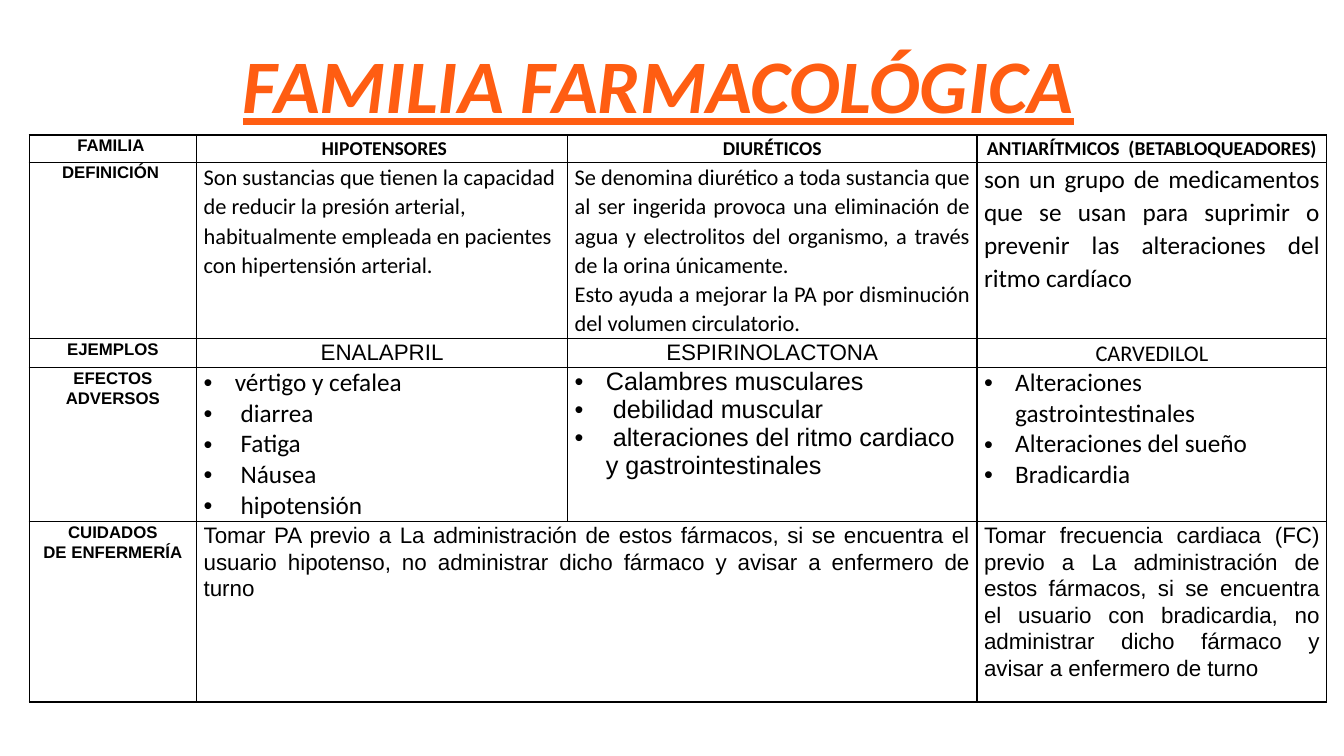
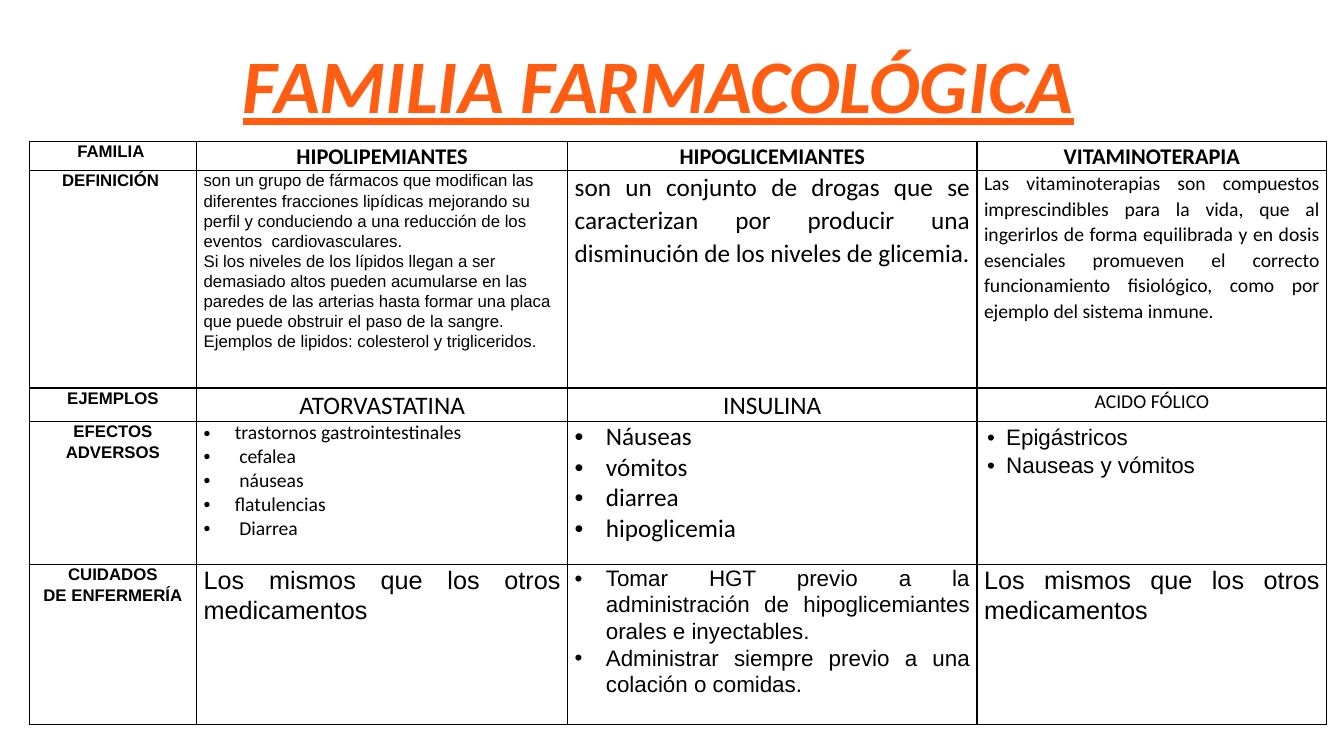
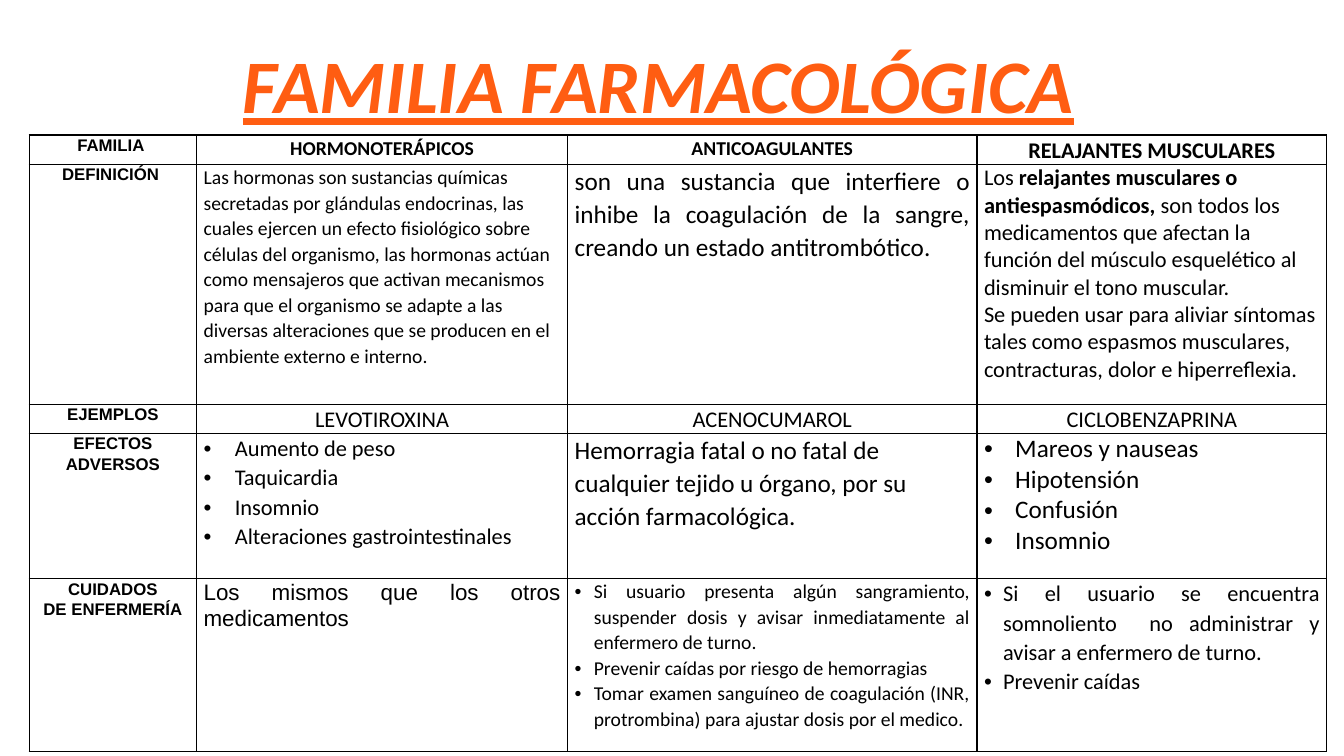
from dataclasses import dataclass

from lxml.etree import SubElement
from pptx import Presentation
from pptx.dml.color import RGBColor
from pptx.enum.text import MSO_ANCHOR, MSO_AUTO_SIZE, PP_ALIGN
from pptx.oxml.ns import qn
from pptx.util import Inches, Pt

COLORS = {"title": "FF5D12", "text": "000000", "border": "000000"}
TITLE = "FAMILIA FARMACOLÓGICA"
SANS, BODY = "Arial", "Calibri"
LEFT, CENTER, JUSTIFY = PP_ALIGN.LEFT, PP_ALIGN.CENTER, PP_ALIGN.JUSTIFY
TABLE_LEFT = 0.29
COLUMN_WIDTHS = (1.66, 3.68, 4.06, 3.47)
WIDE_INDENT, NARROW_INDENT = 0.31, 0.19
BOLD_MARK = "**"


@dataclass(frozen=True)
class Entry:
    """Text of one cell; an indent above zero makes its lines bullets."""
    lines: tuple[str, ...]
    size: int = 16
    font: str = BODY
    align: PP_ALIGN = LEFT
    bold: bool = False
    spacing: float = 1.07
    indent: float = 0
    margin: float = 0.07
    columns: int = 1


@dataclass(frozen=True)
class FamilySlide:
    """Entries of a table, row by row, without the label column."""
    top: float
    row_heights: tuple[float, ...]
    rows: tuple[tuple[Entry, ...], ...]


def label(*lines: str) -> Entry:
    return Entry(lines, 12, SANS, CENTER, bold=True)


def family(name: str, size: int = 14) -> Entry:
    return Entry((name,), size, align=CENTER, bold=True)


def example(name: str, size: int = 16, font: str = BODY) -> Entry:
    return Entry((name,), size, font, CENTER)


def prose(*lines: str, size: int = 16, font: str = BODY,
          align: PP_ALIGN = JUSTIFY, spacing: float = 1.07, columns: int = 1) -> Entry:
    return Entry(lines, size, font, align, spacing=spacing, columns=columns)


def bullets(*lines: str, size: int = 18, font: str = BODY, align: PP_ALIGN = LEFT,
            spacing: float = 1.0, indent: float = WIDE_INDENT, margin: float = 0.07) -> Entry:
    return Entry(lines, size, font, align, spacing=spacing, indent=indent, margin=margin)


def same_care(size: int) -> Entry:
    return prose("Los mismos que los otros medicamentos", size=size, font=SANS)


ROW_LABELS = (
    label("FAMILIA "),
    label("DEFINICIÓN "),
    label("EJEMPLOS"),
    label("EFECTOS ADVERSOS"),
    label("CUIDADOS", "DE ENFERMERÍA"),
)

SLIDES = (
    FamilySlide(1.34, (0.27, 1.75, 0.28, 1.53, 1.79), (
        (family(" HIPOTENSORES"), family("DIURÉTICOS"),
         family("ANTIARÍTMICOS  (BETABLOQUEADORES)")),
        (prose("Son sustancias que tienen la capacidad de reducir la presión arterial, "
               "habitualmente empleada en pacientes con hipertensión arterial.", align=LEFT),
         prose("Se denomina diurético a toda sustancia que al ser ingerida provoca una "
               "eliminación de agua y electrolitos del organismo, a través de la orina "
               "únicamente.",
               "Esto ayuda a mejorar la PA por disminución del volumen circulatorio."),
         prose("son un grupo de medicamentos que se usan para suprimir o prevenir las "
               "alteraciones del ritmo cardíaco", size=18)),
        (example("ENALAPRIL", font=SANS), example("ESPIRINOLACTONA", font=SANS),
         example("CARVEDILOL")),
        (bullets("vértigo y cefalea", " diarrea", " Fatiga", " Náusea", " hipotensión"),
         bullets("Calambres musculares", " debilidad muscular",
                 " alteraciones del ritmo cardiaco  y gastrointestinales", font=SANS),
         bullets("Alteraciones gastrointestinales", "Alteraciones del sueño", "Bradicardia")),
        (prose("Tomar PA previo a La administración de estos fármacos, si se encuentra el "
               "usuario hipotenso, no administrar dicho fármaco y avisar a enfermero de turno",
               font=SANS, columns=2),
         prose("Tomar frecuencia cardiaca (FC) previo a La administración de estos fármacos, "
               "si se encuentra el usuario con bradicardia, no administrar dicho fármaco y "
               "avisar a enfermero de turno", font=SANS)),
    )),
    FamilySlide(1.4, (0.29, 2.16, 0.33, 1.42, 1.59), (
        (family("HIPOLIPEMIANTES", 16), family("HIPOGLICEMIANTES", 16),
         family("VITAMINOTERAPIA", 16)),
        (prose("son un grupo de fármacos que modifican las diferentes fracciones lipídicas "
               "mejorando su perfil y conduciendo a una reducción de los eventos  "
               "cardiovasculares.",
               "Si los niveles de los lípidos llegan a ser demasiado altos pueden acumularse "
               "en las paredes de las arterias hasta formar una placa que puede obstruir el "
               "paso de la sangre.",
               "Ejemplos de lipidos: colesterol y trigliceridos.",
               size=12, font=SANS, align=LEFT),
         prose("son un conjunto de drogas que se caracterizan por producir una disminución "
               "de los niveles de glicemia.", size=18),
         prose("Las vitaminoterapias son compuestos imprescindibles para la vida, que al "
               "ingerirlos de forma equilibrada y en dosis esenciales promueven el correcto "
               "funcionamiento fisiológico, como por ejemplo del sistema inmune.", size=14)),
        (example("ATORVASTATINA", 18), example("INSULINA", 18), example("ACIDO FÓLICO", 14)),
        (bullets("trastornos gastrointestinales", " cefalea", " náuseas", "flatulencias",
                 " Diarrea", size=14),
         bullets("Náuseas", "vómitos", "diarrea", "hipoglicemia"),
         bullets("Epigástricos", "Nauseas y vómitos", size=16, font=SANS, spacing=1.15,
                 indent=NARROW_INDENT, margin=0.1)),
        (same_care(18),
         bullets("Tomar HGT previo a la administración de hipoglicemiantes orales e "
                 "inyectables.",
                 "Administrar siempre previo a una colación o comidas. ",
                 size=16, font=SANS, align=JUSTIFY, spacing=1.07),
         same_care(18)),
    )),
    FamilySlide(1.34, (0.29, 2.38, 0.29, 1.44, 1.72), (
        (family(" HORMONOTERÁPICOS "), family("ANTICOAGULANTES"),
         family("RELAJANTES MUSCULARES", 16)),
        (prose("Las hormonas son sustancias químicas secretadas por glándulas endocrinas, las "
               "cuales ejercen un efecto fisiológico sobre células del organismo, las hormonas "
               "actúan como mensajeros que activan mecanismos para que el organismo se adapte "
               "a las diversas alteraciones que se producen en el ambiente externo e interno.",
               size=14, align=LEFT),
         prose("son una sustancia que interfiere o inhibe la coagulación de la sangre, creando "
               "un estado antitrombótico. ", size=18),
         prose("Los **relajantes musculares o antiespasmódicos,** son todos los medicamentos "
               "que afectan la función del músculo esquelético al disminuir el tono muscular.",
               "Se pueden usar para aliviar síntomas tales como espasmos musculares, "
               "contracturas, dolor e hiperreflexia.", align=LEFT, spacing=1.0)),
        (example("LEVOTIROXINA"), example("ACENOCUMAROL"), example("CICLOBENZAPRINA")),
        (bullets("Aumento de peso", "Taquicardia", "Insomnio",
                 "Alteraciones gastrointestinales", size=16, spacing=1.07),
         prose("Hemorragia fatal o no fatal de cualquier tejido u órgano, por su acción "
               "farmacológica.", size=18, align=LEFT),
         bullets("Mareos y nauseas", "Hipotensión", "Confusión", "Insomnio")),
        (same_care(16),
         bullets("Si usuario presenta algún sangramiento, suspender dosis y avisar "
                 "inmediatamente al enfermero de turno.",
                 "Prevenir caídas por riesgo de hemorragias",
                 "Tomar examen sanguíneo de coagulación (INR, protrombina) para ajustar dosis "
                 "por el medico.",
                 size=14, align=JUSTIFY, spacing=1.07, indent=NARROW_INDENT),
         bullets("Si el usuario se encuentra somnoliento  no administrar y avisar a enfermero "
                 "de turno.",
                 "Prevenir caídas",
                 size=16, align=JUSTIFY, spacing=1.07, indent=NARROW_INDENT)),
    )),
)


def add_title(slide) -> None:
    title = slide.shapes.title
    title.left, title.top = Inches(2.25), Inches(0.33)
    title.width, title.height = Inches(8.56), Inches(1.01)
    frame = title.text_frame
    frame.text = TITLE
    frame.word_wrap = False
    frame.auto_size = MSO_AUTO_SIZE.SHAPE_TO_FIT_TEXT
    frame.vertical_anchor = MSO_ANCHOR.TOP
    paragraph = frame.paragraphs[0]
    paragraph.alignment = CENTER
    font = paragraph.font
    font.name, font.size = BODY, Pt(54)
    font.bold = font.italic = font.underline = True
    font.color.rgb = RGBColor.from_string(COLORS["title"])


def set_borders(cell) -> None:
    properties = cell._tc.get_or_add_tcPr()
    for side in ("lnL", "lnR", "lnT", "lnB"):
        line = SubElement(properties, qn(f"a:{side}"), w=str(Pt(1)))
        fill = SubElement(line, qn("a:solidFill"))
        SubElement(fill, qn("a:srgbClr"), val=COLORS["border"])


def set_bullet(paragraph, indent: float) -> None:
    properties = paragraph._p.get_or_add_pPr()
    properties.set("marL", str(Inches(indent)))
    properties.set("indent", str(-Inches(indent)))
    SubElement(properties, qn("a:buFont"), typeface=SANS)
    SubElement(properties, qn("a:buChar"), char="•")


def write_line(paragraph, line: str, entry: Entry) -> None:
    """Write one line; text between bold marks becomes a bold run."""
    if entry.indent:
        set_bullet(paragraph, entry.indent)
    paragraph.alignment = entry.align
    paragraph.line_spacing = entry.spacing
    font = paragraph.font
    font.name, font.size, font.bold = entry.font, Pt(entry.size), entry.bold
    font.color.rgb = RGBColor.from_string(COLORS["text"])
    for position, part in enumerate(line.split(BOLD_MARK)):
        run = paragraph.add_run()
        run.text = part
        if position % 2:
            run.font.bold = True


def fill_cell(cell, entry: Entry) -> None:
    cell.margin_left = cell.margin_right = Inches(entry.margin)
    cell.margin_top = cell.margin_bottom = 0
    frame = cell.text_frame
    for index, line in enumerate(entry.lines):
        paragraph = frame.add_paragraph() if index else frame.paragraphs[0]
        write_line(paragraph, line, entry)


def add_family_table(slide, content: FamilySlide) -> None:
    table = slide.shapes.add_table(
        len(ROW_LABELS), len(COLUMN_WIDTHS), Inches(TABLE_LEFT), Inches(content.top),
        Inches(sum(COLUMN_WIDTHS)), Inches(sum(content.row_heights))).table
    table.first_row = table.horz_banding = False
    for column, width in zip(table.columns, COLUMN_WIDTHS):
        column.width = Inches(width)
    for row, height in zip(table.rows, content.row_heights):
        row.height = Inches(height)
    for cell in table.iter_cells():
        set_borders(cell)
        cell.fill.background()
    for row_index, (row_label, entries) in enumerate(zip(ROW_LABELS, content.rows)):
        column_index = 0
        for entry in (row_label, *entries):
            cell = table.cell(row_index, column_index)
            if entry.columns > 1:
                cell.merge(table.cell(row_index, column_index + entry.columns - 1))
            fill_cell(cell, entry)
            column_index += entry.columns


def main() -> None:
    presentation = Presentation()
    presentation.slide_width, presentation.slide_height = Inches(13.33), Inches(7.5)
    title_only = presentation.slide_layouts[5]
    for content in SLIDES:
        slide = presentation.slides.add_slide(title_only)
        add_title(slide)
        add_family_table(slide, content)
    presentation.save("out.pptx")


if __name__ == "__main__":
    main()
